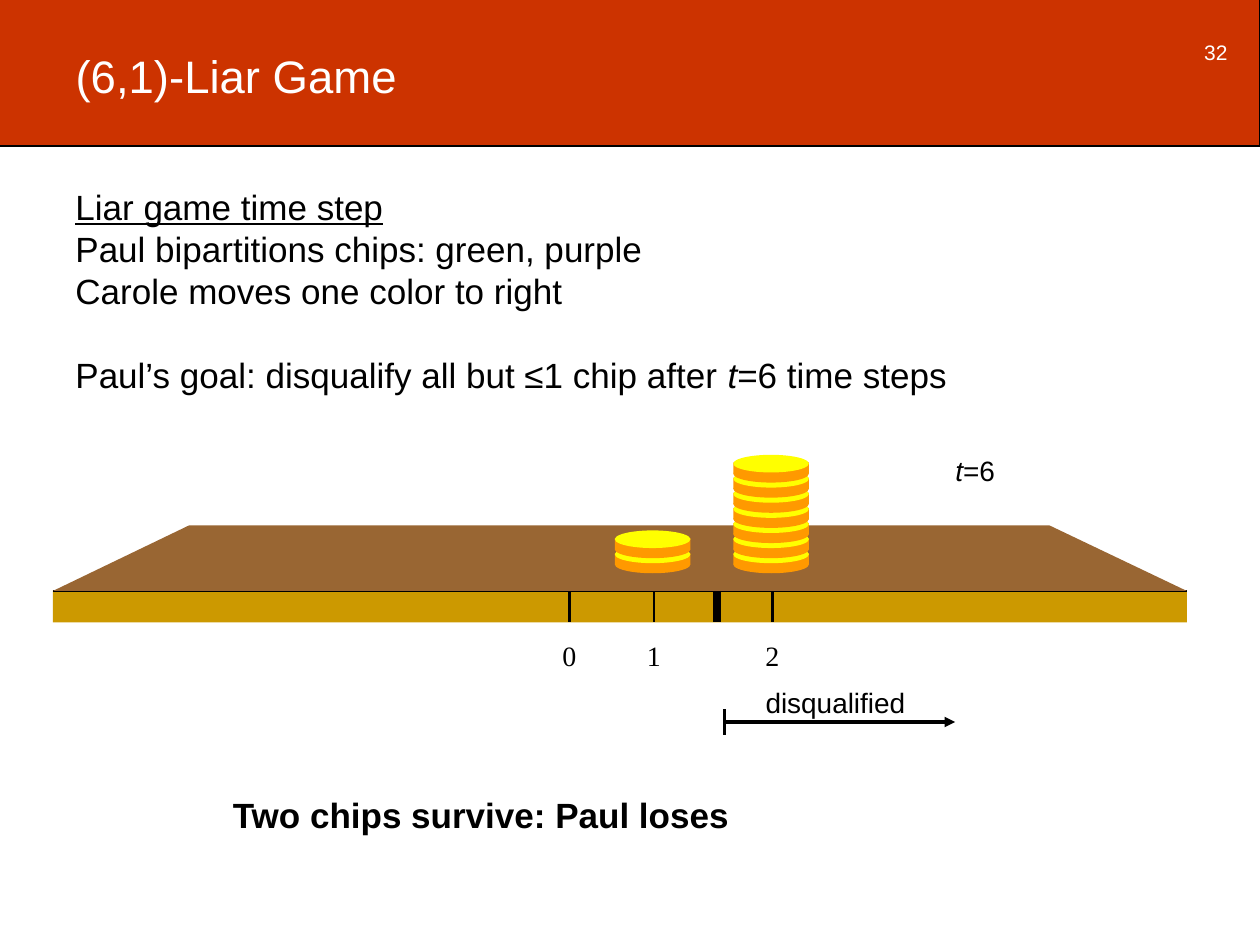
from lxml import etree
from pptx import Presentation
from pptx.dml.color import RGBColor
from pptx.enum.shapes import MSO_CONNECTOR, MSO_SHAPE
from pptx.enum.text import MSO_ANCHOR, PP_ALIGN
from pptx.oxml.ns import qn
from pptx.util import Inches, Pt

RECT, OVAL = MSO_SHAPE.RECTANGLE, MSO_SHAPE.OVAL
STRAIGHT = MSO_CONNECTOR.STRAIGHT
LEFT, CENTER, RIGHT = PP_ALIGN.LEFT, PP_ALIGN.CENTER, PP_ALIGN.RIGHT
TOP, MIDDLE = MSO_ANCHOR.TOP, MSO_ANCHOR.MIDDLE

COLORS = {
    "banner": "CC3300", "text": "000000", "light": "FFFFFF",
    "board_top": "996633", "board_front": "CC9900",
    "chip_side": "FF9900", "chip_face": "FFFF00",
}
BOARD_LEFT, BOARD_RIGHT = 0.42, 9.42
BOARD_BACK, BOARD_EDGE, BOARD_BOTTOM = 4.17, 4.69, 4.94
CHIP_WIDTH, CHIP_STEP, LOWEST_CHIP = 0.6, 0.12, 4.33


def color(name):
    return RGBColor.from_string(COLORS[name])


def write_text(frame, paragraphs, size=16, font="Arial", fill="text", bold=False,
               align=LEFT, anchor=TOP, wrap=False, leading=None):
    frame.word_wrap = wrap
    frame.vertical_anchor = anchor
    for index, runs in enumerate(paragraphs):
        paragraph = frame.paragraphs[0] if index == 0 else frame.add_paragraph()
        paragraph.alignment = align
        if leading:
            paragraph.line_spacing = Pt(leading)
        for text, style in runs:
            run = paragraph.add_run()
            run.text = text
            run.font.name, run.font.size, run.font.bold = font, Pt(size), bold
            run.font.italic = style == "italic"
            run.font.underline = style == "underline"
            run.font.color.rgb = color(fill)


def add_text(shapes, box, paragraphs, **text_format):
    frame = shapes.add_textbox(*map(Inches, box)).text_frame
    write_text(frame, paragraphs, **text_format)
    return frame


def paint(shape, fill, outline=None):
    shape.shadow.inherit = False
    shape.fill.solid()
    shape.fill.fore_color.rgb = color(fill)
    if outline:
        shape.line.color.rgb = color("text")
        shape.line.width = Pt(outline)
    else:
        shape.line.fill.background()


def add_block(shapes, kind, box, fill, outline=None):
    block = shapes.add_shape(kind, *map(Inches, box))
    paint(block, fill, outline)


def add_line(shapes, start, end, width=1.5, arrow=False):
    line = shapes.add_connector(STRAIGHT, *map(Inches, start + end))
    line.line.color.rgb = color("text")
    line.line.width = Pt(width)
    if arrow:
        etree.SubElement(line.line._get_or_add_ln(), qn("a:tailEnd"), type="triangle")
    etree.SubElement(line._element.spPr, qn("a:effectLst"))


def add_header(slide):
    add_block(slide.shapes, RECT, (-0.01, -0.01, 10.01, 1.17), "banner", outline=0.75)
    title = slide.shapes.title
    slide.shapes._spTree.append(title._element)
    title.left, title.top, title.width, title.height = map(Inches, (0.5, 0.33, 7.58, 1))
    write_text(title.text_frame, [[("(6,1)-Liar Game", None)]], size=26, fill="light", wrap=True)
    add_text(slide.shapes, (9.42, 0.15, 0.42, 0.52), [[("32", None)]],
             size=12, fill="light", align=RIGHT, anchor=MIDDLE, wrap=True)


def add_rules(shapes):
    rules = [
        [("Liar game time step", "underline")],
        [("Paul bipartitions chips: green, purple", None)],
        [("Carole moves one color to right", None)],
        [("Paul’s goal: disqualify all but ≤1 chip after ", None),
         ("t", "italic"), ("=6 time steps", None)],
    ]
    frame = add_text(shapes, (0.5, 1.42, 7.18, 1.78), rules, size=20, leading=24)
    frame.paragraphs[-1].space_before = Pt(24)


def add_board(shapes):
    add_block(shapes, RECT, (BOARD_LEFT, BOARD_EDGE, BOARD_RIGHT - BOARD_LEFT,
                             BOARD_BOTTOM - BOARD_EDGE), "board_front")
    add_line(shapes, (BOARD_LEFT, BOARD_EDGE), (BOARD_RIGHT, BOARD_EDGE))
    for label, x in (("0", 4.52), ("1", 5.19), ("2", 6.13)):
        add_line(shapes, (x, BOARD_EDGE), (x, BOARD_BOTTOM))
        add_text(shapes, (x - 0.165, 5.02, 0.33, 0.4), [[(label, None)]],
                 font="Times New Roman", align=CENTER)
    outline = shapes.build_freeform(Inches(BOARD_RIGHT), Inches(BOARD_EDGE))
    corners = [(8.33, BOARD_BACK), (1.5, BOARD_BACK), (BOARD_LEFT, BOARD_EDGE)]
    outline.add_line_segments([(Inches(x), Inches(y)) for x, y in corners])
    paint(outline.convert_to_shape(), "board_top")
    add_line(shapes, (5.69, BOARD_EDGE), (5.69, BOARD_BOTTOM), width=5)


def add_disqualified_range(shapes):
    parts = shapes.add_group_shape().shapes
    add_line(parts, (5.75, 5.73), (7.58, 5.73), width=2, arrow=True)
    add_line(parts, (5.75, 5.63), (5.75, 5.83))
    add_text(parts, (5.97, 5.39, 1.32, 0.37), [[("disqualified", None)]], align=CENTER)


def add_chip_stack(shapes, left, count):
    for level in range(count):
        top = LOWEST_CHIP - level * CHIP_STEP
        chip = shapes.add_group_shape().shapes
        add_block(chip, RECT, (left, top + 0.06, CHIP_WIDTH, 0.09), "chip_side")
        add_block(chip, OVAL, (left, top + 0.08, CHIP_WIDTH, 0.14), "chip_side")
        add_block(chip, OVAL, (left, top, CHIP_WIDTH, 0.14), "chip_face")


def main():
    deck = Presentation()
    deck.slide_width, deck.slide_height = Inches(10), Inches(7.5)
    slide = deck.slides.add_slide(deck.slide_layouts[5])
    shapes = slide.shapes
    add_header(slide)
    add_rules(shapes)
    add_text(shapes, (7.48, 3.55, 0.52, 0.37), [[("t", "italic"), ("=6", None)]], align=CENTER)
    add_board(shapes)
    add_disqualified_range(shapes)
    for left, count in ((4.88, 2), (5.82, 7)):
        add_chip_stack(shapes, left, count)
    add_text(shapes, (1.75, 6.25, 4.17, 0.44), [[("Two chips survive: Paul loses", None)]],
             size=20, bold=True)
    deck.save("out.pptx")


if __name__ == "__main__":
    main()
